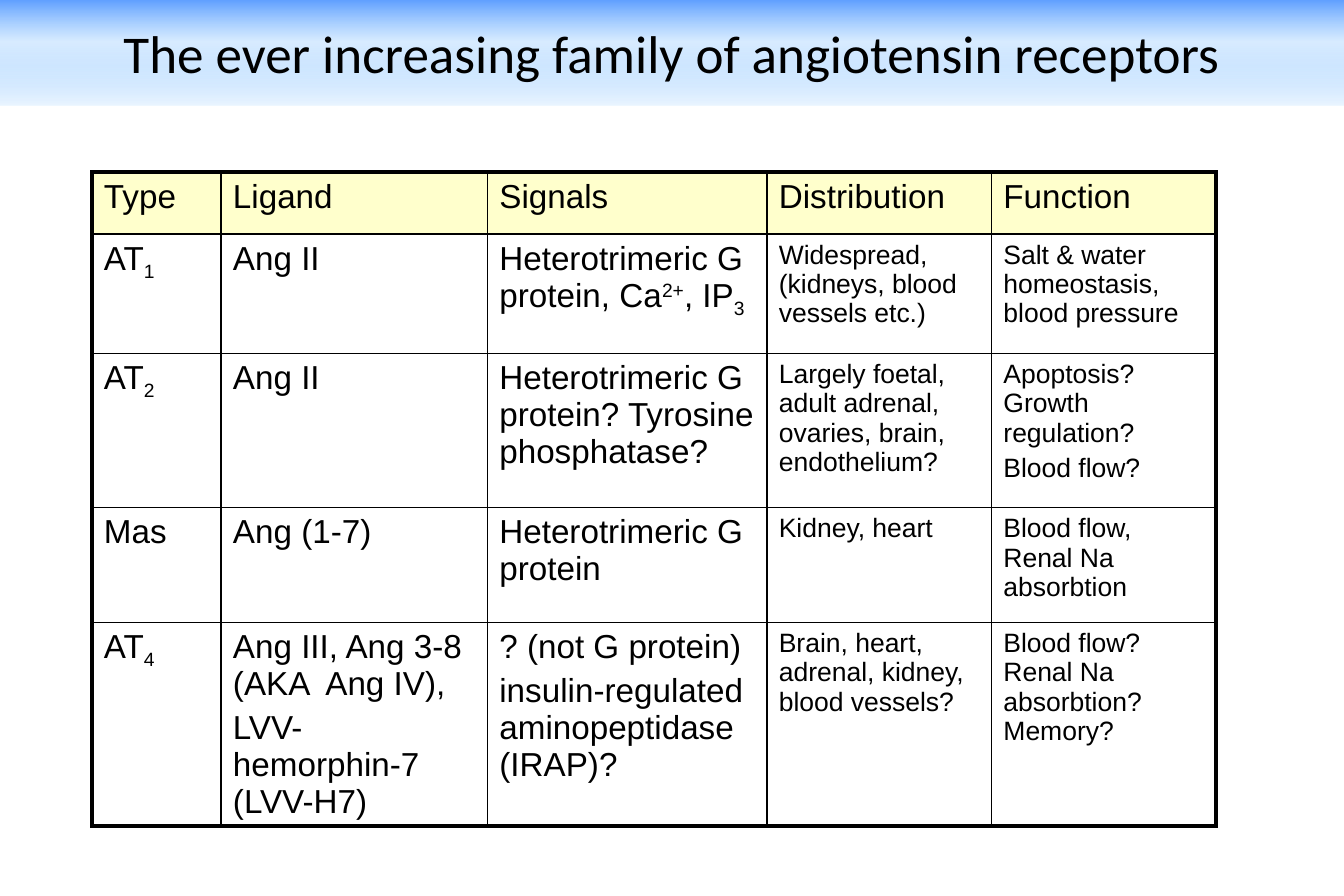
from lxml import etree
from pptx import Presentation, util as u
from pptx.dml.color import RGBColor
from pptx.enum import shapes, text
from pptx.oxml import ns, parse_xml

BLACK, WHITE, CREAM = "000000", "FFFFFF", "FFFFCC"
THIN, THICK = 1, 2.25
COLS = [1.08, 2.23, 2.34, 1.88, 1.88]
ROWS = [0.52, 1, 1.29, 0.96, 1.5]
SKY = [(0, "5E9EFF", 100), (40, "85C2FF", 31), (100, "EBF5FF", 100)]

# "\n" parts paragraphs, "|" parts runs; "_" lowers a run, "^" raises it
SHIFT = {"_": "-25000", "^": "30000"}
CELLS = [
    ["Type", "Ligand", "Signals", "Distribution", "Function"],
    ["AT|_1", "Ang II", "Heterotrimeric G protein, Ca|^2+|, IP|_3",
     "Widespread, (kidneys, blood vessels etc.)",
     "Salt & water homeostasis, blood pressure"],
    ["AT|_2", "Ang II", "Heterotrimeric G protein? Tyrosine phosphatase?",
     "Largely foetal, adult adrenal, ovaries, brain, endothelium?",
     "Apoptosis? Growth regulation?\nBlood flow?"],
    ["Mas", "Ang (1-7)", "Heterotrimeric G protein", "Kidney, heart",
     "Blood flow, Renal Na absorbtion"],
    ["AT|_4", "Ang III, Ang 3-8 (AKA  Ang IV),\nLVV-hemorphin-7 (LVV-H7)",
     "? (not G protein)\ninsulin-regulated aminopeptidase (IRAP)?",
     "Brain, heart, adrenal, kidney, blood vessels?",
     "Blood flow? Renal Na absorbtion? Memory?"],
]


def color(code):
    return RGBColor.from_string(code)


class Deck:
    """Holds the style and the current slide."""
    head, body = "Calibri", "Arial"

    def __init__(self, wide, high):
        self.deck = Presentation()
        self.deck.slide_width = u.Inches(wide)
        self.deck.slide_height = u.Inches(high)
        self.slide = self.deck.slides.add_slide(self.deck.slide_layouts[6])

    def style(self, para, face, size):
        para.font.name, para.font.size = face, u.Pt(size)
        para.font.color.rgb = color(BLACK)

    def label(self, frame, words, face, size):
        for i, line in enumerate(words.split("\n")):
            para = frame.add_paragraph() if i else frame.paragraphs[0]
            self.style(para, face, size)
            if i:
                para.space_before = u.Pt(size * 0.2)
            for part in line.split("|"):
                run = para.add_run()
                run.text = part.lstrip("_^")
                if part[0] in SHIFT:
                    run._r.get_or_add_rPr().set("baseline", SHIFT[part[0]])

    def banner(self, words, box, stops, size):
        bar = self.slide.shapes.add_shape(
            shapes.MSO_SHAPE.RECTANGLE, *map(u.Inches, box))
        bar.shadow.inherit = False
        bar.line.fill.background()
        # Gradient with a part-clear middle stop
        marks = "".join(
            f'<a:gs pos="{pos * 1000}"><a:srgbClr val="{code}">'
            f'<a:alpha val="{alpha * 1000}"/></a:srgbClr></a:gs>'
            for pos, code, alpha in stops)
        grad = parse_xml(
            f'<a:gradFill {ns.nsdecls("a")} rotWithShape="1"><a:gsLst>{marks}'
            '</a:gsLst><a:lin ang="5400000" scaled="0"/></a:gradFill>')
        bar.fill.background()
        props = bar._element.spPr
        props.replace(props.find(ns.qn("a:noFill")), grad)
        frame = bar.text_frame
        frame.word_wrap = True
        frame.vertical_anchor = text.MSO_ANCHOR.MIDDLE
        self.label(frame, words, self.head, size)
        frame.paragraphs[0].alignment = text.PP_ALIGN.CENTER

    def edge(self, cell, side, width):
        line = etree.SubElement(cell._tc.get_or_add_tcPr(),
                                ns.qn(f"a:ln{side}"), w=str(u.Pt(width)))
        fill = etree.SubElement(line, ns.qn("a:solidFill"))
        etree.SubElement(fill, ns.qn("a:srgbClr"), val=BLACK)

    def table(self, rows, left, top, cols, highs):
        grid = self.slide.shapes.add_table(
            len(highs), len(cols), u.Inches(left), u.Inches(top),
            u.Inches(sum(cols)), u.Inches(sum(highs))).table
        grid.first_row = grid.horz_banding = False
        for col, wide in zip(grid.columns, cols):
            col.width = u.Inches(wide)
        for row, high in zip(grid.rows, highs):
            row.height = u.Inches(high)
        for r, row in enumerate(rows):
            for c, words in enumerate(row):
                cell = grid.cell(r, c)
                # Thick outer frame, thin inner lines
                outer = {"L": c == 0, "R": c == len(cols) - 1,
                         "T": r == 0, "B": r == len(highs) - 1}
                for side, rim in outer.items():
                    self.edge(cell, side, THICK if rim else THIN)
                cell.fill.solid()
                cell.fill.fore_color.rgb = color(WHITE if r else CREAM)
                size = 16 if r and c > 2 else 20
                self.label(cell.text_frame, words, self.body, size)


def main():
    deck = Deck(11.25, 7.5)
    # Title band
    deck.banner("The ever increasing family of angiotensin receptors",
                (0, 0, 11.25, 0.88), SKY, 32)
    # Receptor table
    deck.table(CELLS, 0.77, 1.44, COLS, ROWS)
    deck.deck.save("out.pptx")


if __name__ == "__main__":
    main()
